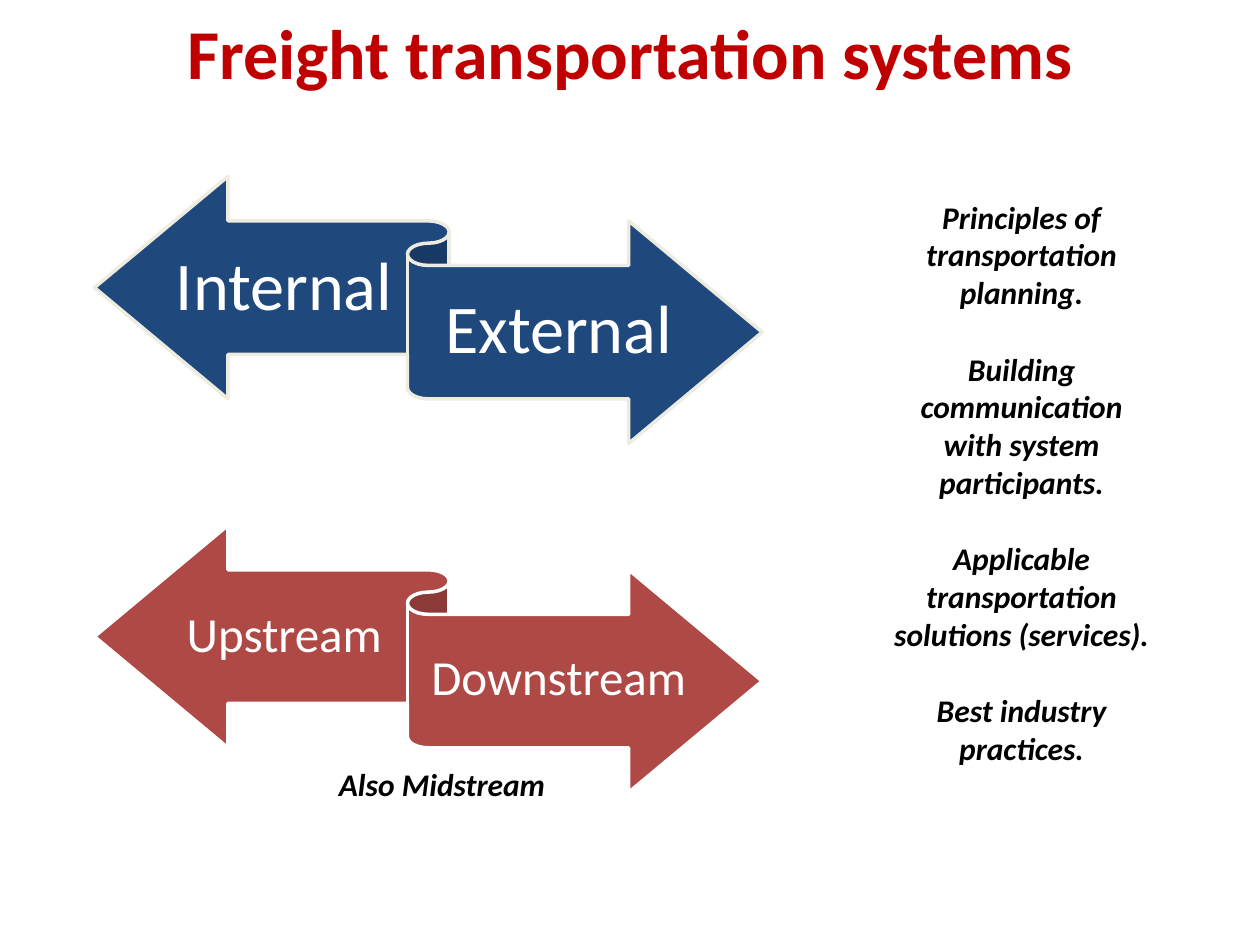
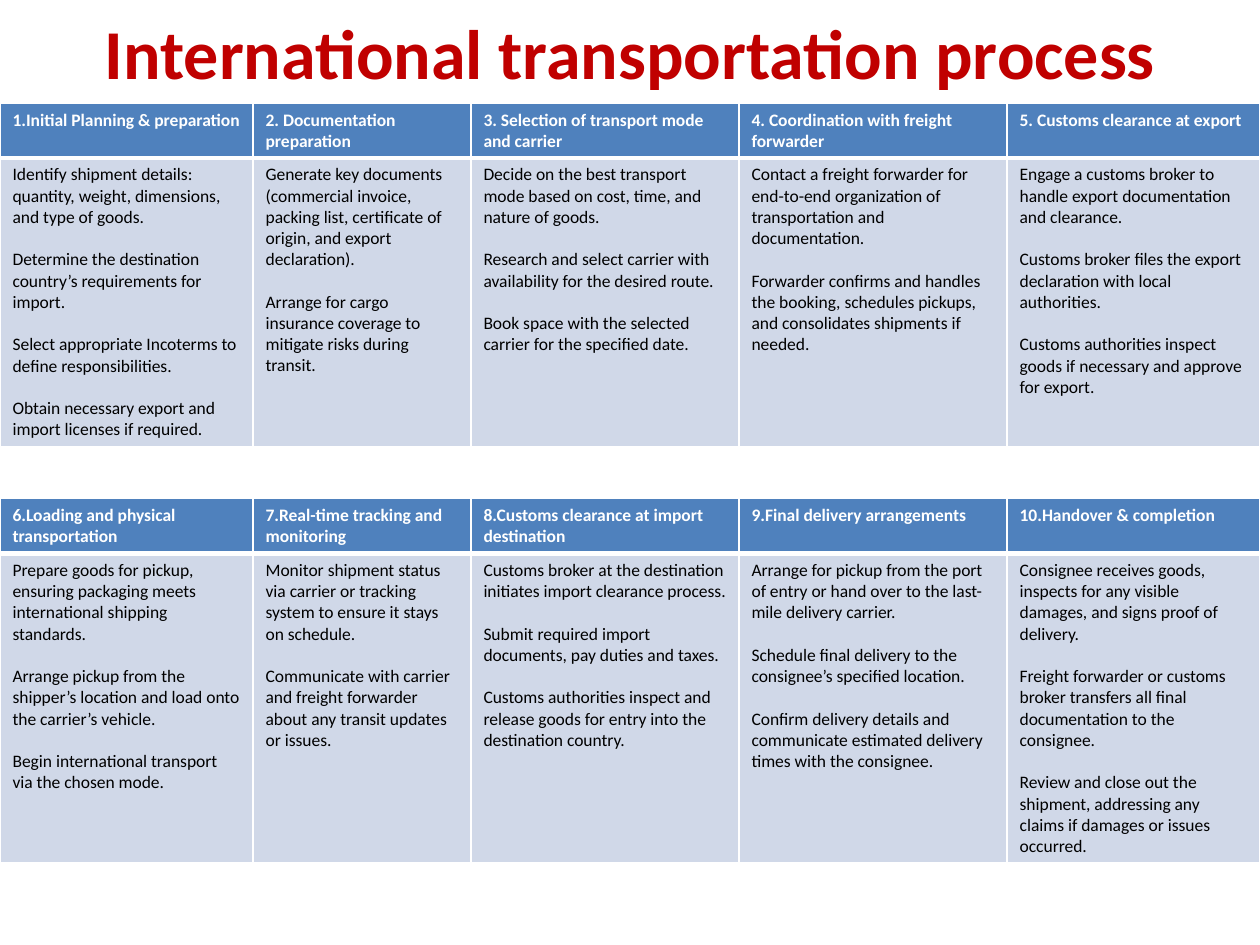
from lxml import etree
from pptx import Presentation
from pptx.dml.color import RGBColor as Rgb
from pptx.enum import shapes, text
from pptx.oxml import ns
from pptx.util import Pt


class Theme:
    face = "Calibri"
    white, black = "FFFFFF", "000000"
    navy, brick, cream = "1F497D", "AE4946", "EEECE1"
    head, body = "4F81BD", "D0D8E8"
    title = dict(size=Pt(40), bold=True, color="C00000")
    note = dict(size=Pt(18), bold=True, italic=True, color=black)
    large = dict(size=Pt(39), color=white)
    small = dict(size=Pt(28), color=white)
    step = dict(size=Pt(10), bold=True, color=white)
    task = dict(size=Pt(10), bold=False, color=black)


def write(frame, lines, style, para):
    """Fill a text frame; every paragraph after the first gets the gap."""
    frame.word_wrap = True
    for i, line in enumerate(lines):
        p = frame.paragraphs[0] if i == 0 else frame.add_paragraph()
        run = p.add_run()
        run.text = line
        run.font.name = Theme.face
        for key, val in style.items():
            if key == "color":
                run.font.color.rgb = Rgb.from_string(val)
            else:
                setattr(run.font, key, val)
        for key, val in para.items():
            if key != "space_before" or i:
                setattr(p, key, val)


def label(slide, area, lines, style, para=None, **frame):
    """Add a centred text box."""
    tf = slide.shapes.add_textbox(*map(Pt, area)).text_frame
    for key, val in frame.items():
        setattr(tf, key, val)
    write(tf, lines, style, {"alignment": text.PP_ALIGN.CENTER, **(para or {})})


deck = Presentation()
deck.slide_width, deck.slide_height = Pt(720), Pt(540)
middle = text.MSO_ANCHOR.MIDDLE

# Slides and titles
pages = []
for name in ("Freight transportation systems", "International transportation process"):
    page = deck.slides.add_slide(deck.slide_layouts[6])
    label(page, (36, 0.7, 648, 57), [name], Theme.title, vertical_anchor=middle)
    pages.append(page)
systems, process = pages

# Ribbons with a word on each arrow
ribbons = [
    (100.8, Theme.navy, Theme.cream, Theme.large, 11, ("Internal", "External")),
    (300.2, Theme.brick, Theme.white, Theme.small, 8, ("Upstream", "Downstream")),
]
for top, fill, edge, style, pad, words in ribbons:
    area = map(Pt, (54, top, 381.6, 152.6))
    ribbon = systems.shapes.add_shape(shapes.MSO_SHAPE.LEFT_RIGHT_RIBBON, *area)
    ribbon.shadow.inherit = False
    ribbon.fill.solid()
    ribbon.fill.fore_color.rgb = Rgb.from_string(fill)
    ribbon.line.color.rgb = Rgb.from_string(edge)
    ribbon.line.width = Pt(2)
    for word, left, drop, width in zip(words, (99.4, 244.8), (26.6, 51.1), (126, 149)):
        label(systems, (left, top + drop, width, 75), [word], style,
              {"line_spacing": 0.9}, vertical_anchor=middle,
              margin_left=0, margin_right=0,
              margin_top=Pt(pad), margin_bottom=Pt(pad + 0.5))

# Notes
label(systems, (170.6, 433.4, 164, 29), ["Also Midstream"], Theme.note)
aims = [
    "Principles of transportation planning.",
    "Building communication with system participants.",
    "Applicable transportation solutions (services).",
    "Best industry practices.",
]
label(systems, (501.8, 109.4, 164, 334), aims, Theme.note, {"space_before": Pt(22)})

# Process steps: top and body height, then heading and tasks per column
widths = (144.6, 124.5, 153.2, 153.2, 144.5)
stages = [
    (59, 165, {
        "1.Initial Planning & preparation": [
            "Identify shipment details: quantity, weight, dimensions, and type of goods.",
            "Determine the destination country’s requirements for import.",
            "Select appropriate Incoterms to define responsibilities.",
            "Obtain necessary export and import licenses if required.",
        ],
        "2. Documentation preparation": [
            "Generate key documents (commercial invoice, packing list, "
            "certificate of origin, and export declaration).",
            "Arrange for cargo insurance coverage to mitigate risks during transit.",
        ],
        "3. Selection of transport mode and carrier": [
            "Decide on the best transport mode based on cost, time, and nature of goods.",
            "Research and select carrier with availability for the desired route.",
            "Book space with the selected carrier for the specified date.",
        ],
        "4. Coordination with freight forwarder": [
            "Contact a freight forwarder for end-to-end organization of "
            "transportation and documentation.",
            "Forwarder confirms and handles the booking, schedules pickups, "
            "and consolidates shipments if needed.",
        ],
        "5. Customs clearance at export": [
            "Engage a customs broker to handle export documentation and clearance.",
            "Customs broker files the export declaration with local authorities.",
            "Customs authorities inspect goods if necessary and approve for export.",
        ],
    }),
    (285, 177, {
        "6.Loading and physical transportation": [
            "Prepare goods for pickup, ensuring packaging meets "
            "international shipping standards.",
            "Arrange pickup from the shipper’s location and load onto "
            "the carrier’s vehicle.",
            "Begin international transport via the chosen mode.",
        ],
        "7.Real-time tracking and monitoring": [
            "Monitor shipment status via carrier or tracking system "
            "to ensure it stays on schedule.",
            "Communicate with carrier and freight forwarder about any "
            "transit updates or issues.",
        ],
        "8.Customs clearance at import destination": [
            "Customs broker at the destination initiates import clearance process.",
            "Submit required import documents, pay duties and taxes.",
            "Customs authorities inspect and release goods for entry into "
            "the destination country.",
        ],
        "9.Final delivery arrangements": [
            "Arrange for pickup from the port of entry or hand over to "
            "the last-mile delivery carrier.",
            "Schedule final delivery to the consignee’s specified location.",
            "Confirm delivery details and communicate estimated delivery "
            "times with the consignee.",
        ],
        "10.Handover & completion": [
            "Consignee receives goods, inspects for any visible damages, "
            "and signs proof of delivery.",
            "Freight forwarder or customs broker transfers all final "
            "documentation to the consignee.",
            "Review and close out the shipment, addressing any claims "
            "if damages or issues occurred.",
        ],
    }),
]
looks = [
    (Theme.head, Theme.step, dict(lnL=1, lnR=1, lnT=1, lnB=3)),
    (Theme.body, Theme.task, dict(lnL=1, lnR=1, lnT=3, lnB=1)),
]
for top, deep, steps in stages:
    area = map(Pt, (0, top, 720, 31 + deep))
    grid = process.shapes.add_table(2, len(steps), *area).table
    grid.horz_banding = False
    for row, high in zip(grid.rows, (31, deep)):
        row.height = Pt(high)
    for col, (step, tasks) in enumerate(steps.items()):
        grid.columns[col].width = Pt(widths[col])
        for row, lines in enumerate(([step], tasks)):
            fill, style, edges = looks[row]
            cell = grid.cell(row, col)
            write(cell.text_frame, lines, style, {"space_before": Pt(12.2)})
            # Borders go ahead of the fill
            props = cell._tc.get_or_add_tcPr()
            for tag, wide in edges.items():
                line = etree.SubElement(props, ns.qn("a:" + tag), w=str(Pt(wide)))
                solid = etree.SubElement(line, ns.qn("a:solidFill"))
                etree.SubElement(solid, ns.qn("a:srgbClr"), val=Theme.white)
            cell.fill.solid()
            cell.fill.fore_color.rgb = Rgb.from_string(fill)

deck.save("out.pptx")
